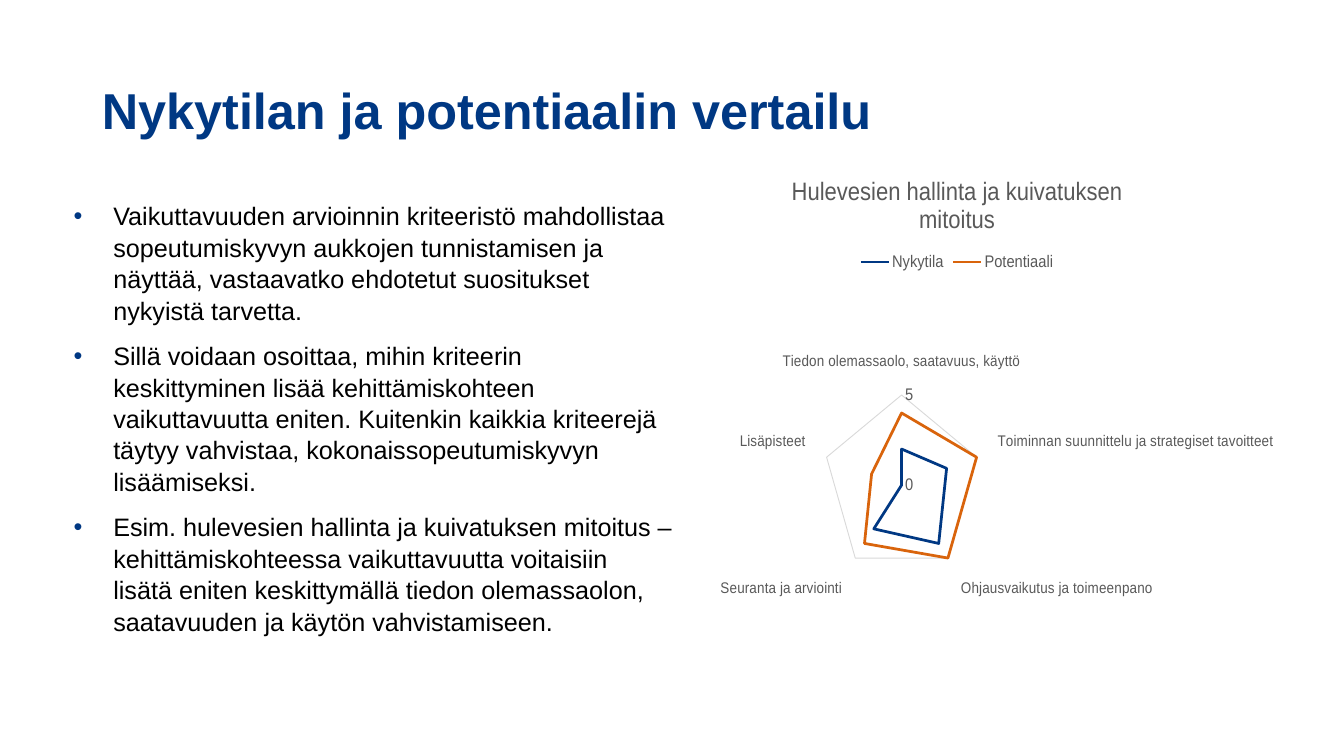
from lxml.etree import SubElement
from pptx import Presentation
from pptx.chart.data import CategoryChartData
from pptx.dml.color import RGBColor
from pptx.enum.chart import XL_CHART_TYPE as ChartType, XL_LEGEND_POSITION as LegendPos, XL_TICK_MARK as Tick
from pptx.enum.text import MSO_ANCHOR as Anchor, MSO_AUTO_SIZE as AutoSize, PP_ALIGN as Align
from pptx.oxml.ns import qn
from pptx.util import Pt

COLORS = {"navy": "003883", "orange": "D9640C", "gray": "595959", "grid": "D9D9D9", "black": "000000"}
FONT = "Arial"
BULLETS = [
    "Vaikuttavuuden arvioinnin kriteeristö mahdollistaa sopeutumiskyvyn aukkojen tunnistamisen ja "
    "näyttää, vastaavatko ehdotetut suositukset nykyistä tarvetta.",
    "Sillä voidaan osoittaa, mihin kriteerin keskittyminen lisää kehittämiskohteen vaikuttavuutta "
    "eniten. Kuitenkin kaikkia kriteerejä täytyy vahvistaa, kokonaissopeutumiskyvyn lisäämiseksi.",
    "Esim. hulevesien hallinta ja kuivatuksen mitoitus –kehittämiskohteessa vaikuttavuutta voitaisiin "
    "lisätä eniten keskittymällä tiedon olemassaolon, saatavuuden ja käytön vahvistamiseen.",
]
CATEGORIES = [
    "Tiedon olemassaolo, saatavuus, käyttö",
    "Toiminnan suunnittelu ja strategiset tavoitteet",
    "Ohjausvaikutus ja toimeenpano",
    "Seuranta ja arviointi",
    "Lisäpisteet",
]
SERIES = [("Nykytila", (2, 3, 4, 3, 0), "navy"), ("Potentiaali", (4, 5, 5, 4, 2), "orange")]


class SlideBuilder:
    """Holds the style and the current slide, and adds its elements."""

    def __init__(self, prs):
        self.s = prs.slides.add_slide(prs.slide_layouts[1])

    def style(self, font, size, color, bold=False):
        font.name, font.size, font.bold = FONT, Pt(size), bold
        font.color.rgb = RGBColor.from_string(COLORS[color])

    def line(self, line, color, width):
        line.color.rgb = RGBColor.from_string(COLORS[color])
        line.width = Pt(width)

    def place(self, sp, box, anchor):
        sp.left, sp.top, sp.width, sp.height = map(Pt, box)
        tf = sp.text_frame
        tf.margin_left = tf.margin_top = tf.margin_right = tf.margin_bottom = 0
        tf.word_wrap, tf.auto_size, tf.vertical_anchor = True, AutoSize.NONE, anchor
        return tf

    def title(self, text, box):
        tf = self.place(self.s.shapes.title, box, Anchor.MIDDLE)
        tf.text = text
        p = tf.paragraphs[0]
        p.alignment, p.line_spacing = Align.LEFT, 0.9
        self.style(p.runs[0].font, 36, "navy", True)

    def bullets(self, items, box, indent=28.35):
        tf = self.place(self.s.placeholders[1], box, Anchor.TOP)
        tf.text = "\n".join(items)
        for i, p in enumerate(tf.paragraphs):
            p.line_spacing, p.space_before = 1.04, Pt(10 if i else 0)
            pPr = p._p.get_or_add_pPr()
            pPr.set("marL", str(Pt(indent)))
            pPr.set("indent", str(-Pt(indent)))
            SubElement(SubElement(pPr, qn("a:buClr")), qn("a:srgbClr"), val=COLORS["navy"])
            SubElement(pPr, qn("a:buFont"), typeface=FONT)
            SubElement(pPr, qn("a:buChar"), char="•")
            self.style(p.runs[0].font, 18, "black")

    def radar(self, title, categories, series, box):
        data = CategoryChartData(number_format="0")
        data.categories = categories
        for name, values, _ in series:
            data.add_series(name, values)
        chart = self.s.shapes.add_chart(ChartType.RADAR, *map(Pt, box), data).chart
        self.style(chart.font, 10, "black")
        chart.has_title = True
        tf = chart.chart_title.text_frame
        tf.text = title
        self.style(tf.paragraphs[0].runs[0].font, 18, "gray")
        chart.chart_title.include_in_layout = False
        chart.has_legend = True
        chart.legend.position, chart.legend.include_in_layout = LegendPos.TOP, False
        self.style(chart.legend.font, 12, "gray")
        chart.plots[0].vary_by_categories = False
        for ser, (_, _, color) in zip(chart.plots[0].series, series):
            self.line(ser.format.line, color, 2.25)
            ser.smooth = False
        cat, val = chart.category_axis, chart.value_axis
        for axis, size in ((cat, 11), (val, 12)):
            axis.major_tick_mark = axis.minor_tick_mark = Tick.NONE
            self.style(axis.tick_labels.font, size, "gray")
        self.line(cat.format.line, "grid", 0.75)
        val.format.line.fill.background()
        val.has_major_gridlines = True
        self.line(val.major_gridlines.format.line, "grid", 0.75)
        val.minimum_scale, val.maximum_scale, val.major_unit = 0, 5, 5


def main():
    prs = Presentation()
    prs.slide_width, prs.slide_height = Pt(960), Pt(540)
    slide = SlideBuilder(prs)
    slide.title("Nykytilan ja potentiaalin vertailu", (72.72, 36.72, 837.36, 87.84))
    slide.radar("Hulevesien hallinta ja kuivatuksen mitoitus", CATEGORIES, SERIES, (507.6, 110.16, 402.48, 370.8))
    slide.bullets(BULLETS, (52.56, 142.56, 427.68, 321.84))
    prs.save("out.pptx")


if __name__ == "__main__":
    main()
